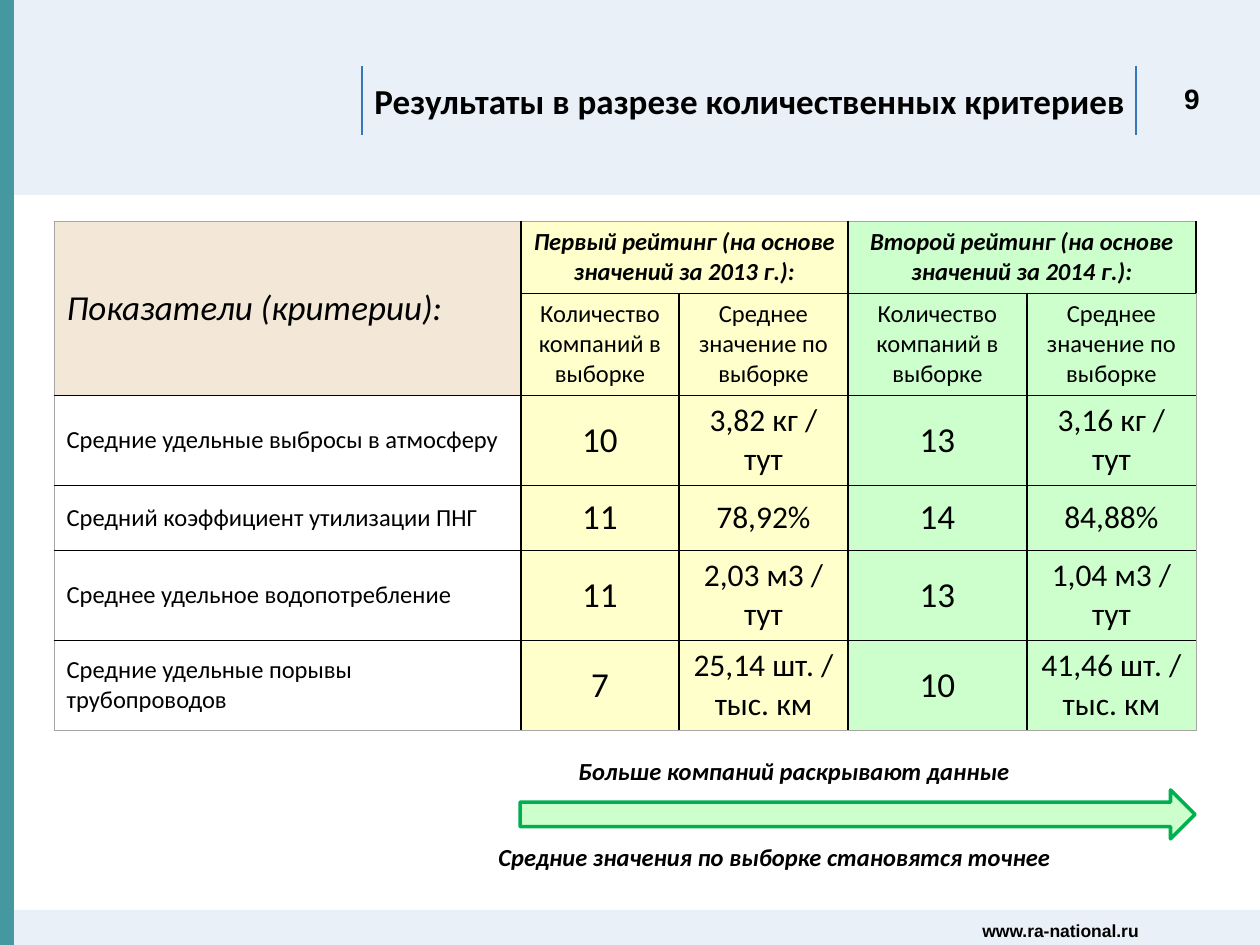
"""Builds the slide that compares two ratings by quantitative criteria."""
from lxml.etree import SubElement
from pptx import Presentation
from pptx.dml.color import RGBColor as Rgb
from pptx.enum.shapes import MSO_CONNECTOR as Line, MSO_SHAPE as Kind
from pptx.enum.text import MSO_ANCHOR as Anchor, PP_ALIGN as Align
from pptx.oxml.ns import qn
from pptx.util import Pt

THEME = {
    "black": "000000", "blue": "3975BA", "teal": "4597A0", "sand": "F3E8D7",
    "yellow": "FFFFCC", "mint": "CCFFCC", "green": "00B050", "edge": "A6A6A6",
    "white": "FFFFFF", "sans": "Arial", "body": "Calibri",
    "big": 20, "value": 18, "number": 16, "text": 14, "small": 10,
}
COUNT, MEAN = "Количество компаний в выборке", "Среднее значение по выборке"
ROWS = [
    ["Показатели (критерии):", "Первый рейтинг (на основе значений за 2013 г.):", "",
     "Второй рейтинг (на основе значений за 2014 г.):", ""],
    ["", COUNT, MEAN, COUNT, MEAN],
    ["Средние удельные выбросы в атмосферу", "10", "3,82 кг / тут", "13", "3,16 кг / тут"],
    ["Средний коэффициент утилизации ПНГ", "11", "78,92%", "14", "84,88%"],
    ["Среднее удельное водопотребление", "11", "2,03 м3 / тут", "13", "1,04 м3 / тут"],
    ["Средние удельные порывы трубопроводов", "7", "25,14 шт. /\nтыс. км", "10",
     "41,46 шт. / тыс. км"],
]
WIDTHS = [467, 158, 169, 179, 169]
HEIGHTS = [72, 102, 90, 65, 90, 90]
SPANS = [((0, 0), (1, 0)), ((0, 1), (0, 2)), ((0, 3), (0, 4))]
FILLS = ["white", "yellow", "yellow", "mint", "mint"]
BANDS = [(0, 910, 1260, 35), (0, 0, 1260, 195)]
RULES = [362, 1136]
BOLD = {"bold": True}
SLANT = {"bold": True, "italic": True}
TEXTS = [
    ("www.ra-national.ru", (861, 917, 399, 28), "small", "sans", BOLD, Align.CENTER, Anchor.MIDDLE),
    ("9", (1137, 66, 75, 65), "number", "sans", BOLD, Align.RIGHT, Anchor.MIDDLE),
    ("Результаты в разрезе количественных критериев", (362, 66, 784, 69),
     "big", "body", BOLD, Align.LEFT, Anchor.MIDDLE),
    ("Больше компаний раскрывают данные", (566, 750, 586, 50),
     "text", "body", SLANT, Align.LEFT, Anchor.TOP),
    ("Средние значения по выборке становятся точнее", (486, 836, 742, 50),
     "text", "body", SLANT, Align.LEFT, Anchor.TOP),
]


def px(n):
    return round(n * 914400 / 126)


def rgb(name):
    return Rgb.from_string(THEME[name])


def write(frame, text, size, font, style, align):
    frame.text = text
    look = {"size": Pt(THEME[size]), "name": THEME[font], **style}
    for para in frame.paragraphs:
        para.alignment = align
        for run in para.runs:
            run.font.color.rgb = rgb("black")
            for key, val in look.items():
                setattr(run.font, key, val)


def block(kind, box, fill, line=None, alpha=None):
    shape = slide.shapes.add_shape(kind, *map(px, box))
    shape.shadow.inherit = False
    shape.fill.solid()
    shape.fill.fore_color.rgb = rgb(fill)
    if line:
        shape.line.color.rgb = rgb(line)
        shape.line.width = Pt(2)
    else:
        shape.line.fill.background()
    if alpha:
        tint = shape._element.spPr.find(qn("a:solidFill"))[0]
        SubElement(tint, qn("a:alpha"), val=str(alpha * 1000))


def rule(x, top, low):
    line = slide.shapes.add_connector(Line.STRAIGHT, px(x), px(top), px(x), px(low))
    line.line.color.rgb = rgb("blue")
    line.line.width = Pt(1.5)
    SubElement(line._element.spPr, qn("a:effectLst"))


def border(cell, r, c):
    outer = {"lnL": c == 0, "lnR": c == len(WIDTHS) - 1,
             "lnT": r == 0, "lnB": r == len(HEIGHTS) - 1}
    props = cell._tc.get_or_add_tcPr()
    for i, (tag, edge) in enumerate(outer.items()):
        line = props.makeelement(qn("a:" + tag), {"w": str(Pt(0.25 if edge else 1))})
        fill = SubElement(line, qn("a:solidFill"))
        SubElement(fill, qn("a:srgbClr"), val=THEME["edge" if edge else "black"])
        props.insert(i, line)


def style(r, c):
    if c == 0:
        return ("big", {"italic": True}) if r == 0 else ("text", {})
    if r < 2:
        return "text", SLANT if r == 0 else {}
    return ("big" if c % 2 else "value"), {}


def grid(left, top):
    size = map(px, (left, top, sum(WIDTHS), sum(HEIGHTS)))
    table = slide.shapes.add_table(len(HEIGHTS), len(WIDTHS), *size).table
    table.first_row = table.horz_banding = False
    for col, w in zip(table.columns, WIDTHS):
        col.width = px(w)
    for row, h in zip(table.rows, HEIGHTS):
        row.height = px(h)
    for start, end in SPANS:
        table.cell(*start).merge(table.cell(*end))
    for r, row in enumerate(ROWS):
        for c, text in enumerate(row):
            cell = table.cell(r, c)
            cell.fill.solid()
            cell.fill.fore_color.rgb = rgb("sand" if c == 0 and r < 2 else FILLS[c])
            cell.vertical_anchor = Anchor.TOP if c and r < 2 else Anchor.MIDDLE
            border(cell, r, c)
            if text:
                size, look = style(r, c)
                write(cell.text_frame, text, size, "body", look,
                      Align.CENTER if c else Align.LEFT)


deck = Presentation()
deck.slide_width, deck.slide_height = px(1260), px(945)
slide = deck.slides.add_slide(deck.slide_layouts[6])
for band in BANDS:
    block(Kind.RECTANGLE, band, "blue", alpha=10)
for x in RULES:
    rule(x, 66, 135)
grid(54, 221)
block(Kind.RIGHT_ARROW, (520, 790, 675, 49), "mint", "green")
for text, box, size, font, look, align, anchor in TEXTS:
    frame = slide.shapes.add_textbox(*map(px, box)).text_frame
    frame.word_wrap = True
    frame.vertical_anchor = anchor
    write(frame, text, size, font, look, align)
block(Kind.RECTANGLE, (-1, 0, 15, 945), "teal")
deck.save("out.pptx")
